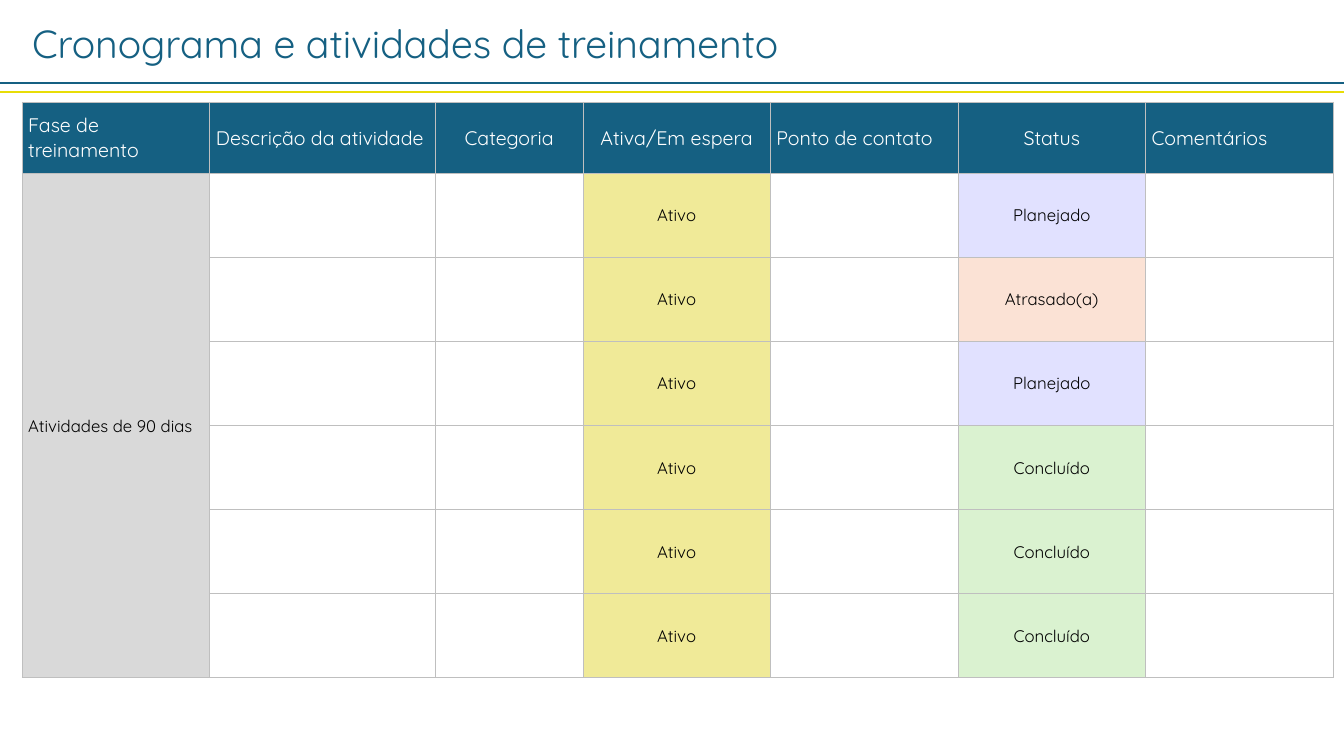
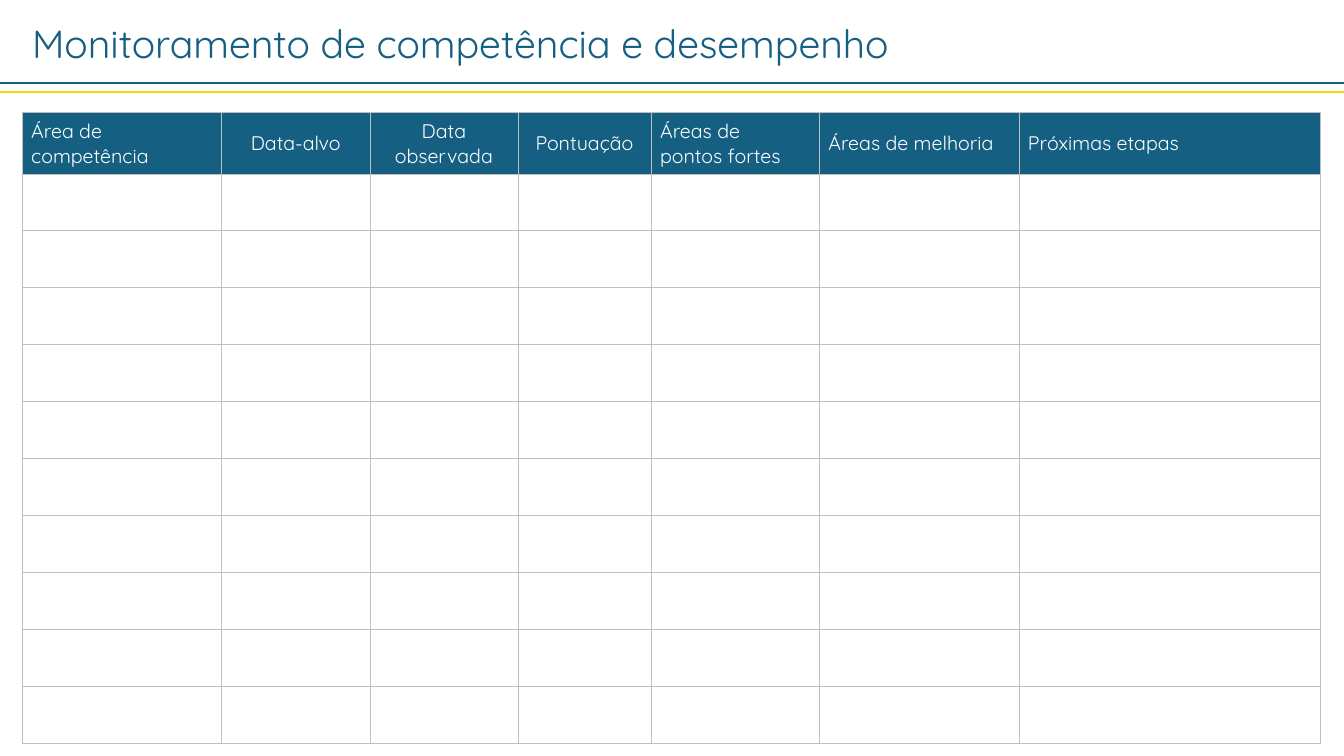
from lxml import etree
from pptx import Presentation
from pptx import util as u
from pptx.dml import color
from pptx.enum import shapes, text
from pptx.oxml import ns

COLORS = {
    "blue": "156082",
    "yellow": "E8DD06",
    "white": "FFFFFF",
    "black": "000000",
    "border": "BFBFBF",
    "phase": "D9D9D9",
    "active": "F0EA98",
    "planned": "E1E1FF",
    "late": "FBE2D5",
    "done": "DAF2D0",
}
CELL_FILLS = {
    "Atividades de 90 dias": "phase",
    "Ativo": "active",
    "Planejado": "planned",
    "Atrasado(a)": "late",
    "Concluído": "done",
}
ALIGNMENTS = {"L": text.PP_ALIGN.LEFT, "C": text.PP_ALIGN.CENTER}


class Deck:
    font = "Quicksand"
    left = 1.65

    def __init__(self):
        self.presentation = Presentation()
        self.presentation.slide_width = u.Inches(13.33)
        self.presentation.slide_height = u.Inches(7.5)
        self.slide = None

    def across(self, percent):
        return round(self.presentation.slide_width * percent / 100)

    def down(self, percent):
        return round(self.presentation.slide_height * percent / 100)

    def rgb(self, name):
        return color.RGBColor.from_string(COLORS[name])

    def add_slide(self, title, title_width):
        layout = self.presentation.slide_layouts[6]
        self.slide = self.presentation.slides.add_slide(layout)
        self.add_title(title, title_width)
        self.add_rule(10.93, "blue")
        self.add_rule(12.13, "yellow")

    def add_title(self, title, width):
        shape = self.slide.shapes.add_textbox(
            self.across(self.left), self.down(1.87), self.across(width), self.down(7.6))
        frame = shape.text_frame
        frame.word_wrap = True
        frame.auto_size = text.MSO_AUTO_SIZE.SHAPE_TO_FIT_TEXT
        self.add_runs(frame.paragraphs[0], title, 28, "blue")

    def add_rule(self, top, color_name):
        y = self.down(top)
        rule = self.slide.shapes.add_connector(
            shapes.MSO_CONNECTOR.STRAIGHT, 0, y, self.across(100), y)
        rule.line.color.rgb = self.rgb(color_name)
        rule.line.width = u.Pt(1.5)
        etree.SubElement(rule._element.spPr, ns.qn("a:effectLst"))

    def add_runs(self, paragraph, content, size, color_name):
        for index, line in enumerate(content.split("\n")):
            if index:
                paragraph.add_line_break()
            run = paragraph.add_run()
            run.text = line
            run.font.name = self.font
            run.font.size = u.Pt(size)
            run.font.color.rgb = self.rgb(color_name)

    def add_table(self, top, width, height, head, weights, alignments, indent, rows):
        frame = self.slide.shapes.add_table(
            len(rows), len(weights), self.across(self.left), self.down(top),
            self.across(width), self.down(height))
        table = frame.table
        table.first_row = table.horz_banding = False
        for column, weight in zip(table.columns, weights):
            column.width = self.across(width * weight / sum(weights))
        body = (height - head) / (len(rows) - 1)
        for row_index, values in enumerate(rows):
            table.rows[row_index].height = self.down(body if row_index else head)
            for column_index, value in enumerate(values):
                cell = table.cell(row_index, column_index)
                self.add_borders(cell)
                if row_index == 0:
                    self.fill_cell(cell, "blue")
                else:
                    self.fill_cell(cell, CELL_FILLS.get(value, "white"))
                if value:
                    style = (14, "white") if row_index == 0 else (12, "black")
                    self.add_cell_text(cell, value, alignments[column_index], indent, style)
        return table

    def fill_cell(self, cell, color_name):
        cell.fill.solid()
        cell.fill.fore_color.rgb = self.rgb(color_name)

    def add_cell_text(self, cell, value, alignment, indent, style):
        cell.vertical_anchor = text.MSO_ANCHOR.MIDDLE
        cell.margin_left = u.Inches(indent if alignment == "L" else 0.01)
        cell.margin_right = cell.margin_top = u.Inches(0.01)
        cell.margin_bottom = 0
        paragraph = cell.text_frame.paragraphs[0]
        paragraph.alignment = ALIGNMENTS[alignment]
        self.add_runs(paragraph, value, *style)

    def add_borders(self, cell):
        properties = cell._tc.get_or_add_tcPr()
        for side in "LRTB":
            line = etree.SubElement(properties, ns.qn(f"a:ln{side}"), w=str(u.Pt(0.5)))
            fill = etree.SubElement(line, ns.qn("a:solidFill"))
            etree.SubElement(fill, ns.qn("a:srgbClr"), val=COLORS["border"])


def add_schedule(deck):
    deck.add_slide("Cronograma e atividades de treinamento", 76.9)
    headings = ["Fase de treinamento", "Descrição da atividade", "Categoria",
                "Ativa/Em espera", "Ponto de contato", "Status", "Comentários"]
    statuses = ["Planejado", "Atrasado(a)", "Planejado"] + ["Concluído"] * 3
    rows = [headings]
    for index, status in enumerate(statuses):
        phase = "" if index else "Atividades de 90 dias"
        rows.append([phase, "", "", "Ativo", "", status, ""])
    table = deck.add_table(
        top=13.47, width=97.55, height=76.2, head=9.4,
        weights=[1.86, 2.24, 1.46, 1.86, 1.86, 1.86, 1.86],
        alignments="LLCCLCL", indent=0.06, rows=rows)
    table.cell(1, 0).merge(table.cell(len(statuses), 0))


def add_monitoring(deck):
    deck.add_slide("Monitoramento de competência e desempenho", 83.05)
    headings = ["Área de competência", "Data-alvo", "Data observada", "Pontuação",
                "Áreas de\npontos fortes", "Áreas de melhoria", "Próximas etapas"]
    deck.add_table(
        top=14.8, width=96.6, height=83.5, head=8.2,
        weights=[1.98, 1.47, 1.47, 1.32, 1.67, 1.98, 2.99],
        alignments="LCCCLLL", indent=0.09,
        rows=[headings] + [[""] * len(headings)] * 10)


def main():
    deck = Deck()
    add_schedule(deck)
    add_monitoring(deck)
    deck.presentation.save("out.pptx")


if __name__ == "__main__":
    main()
